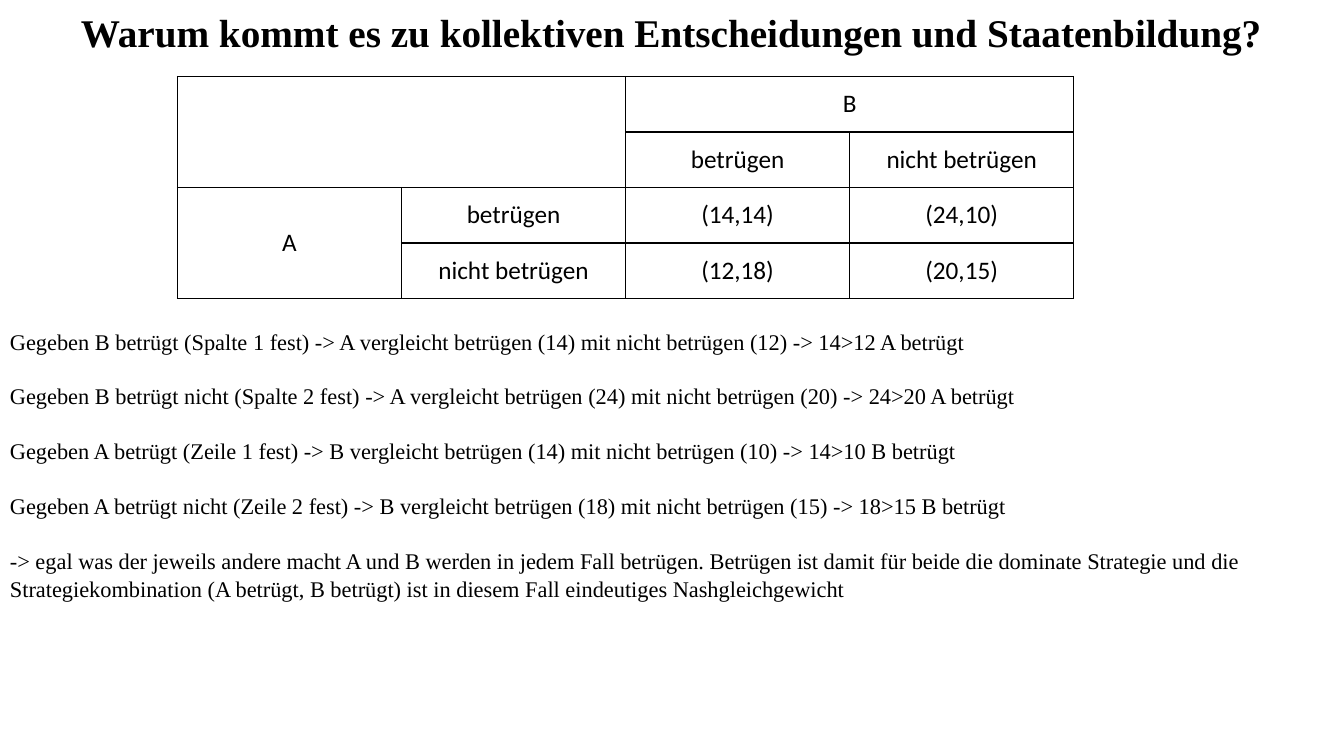
from lxml import etree
from pptx import Presentation
from pptx.dml.color import RGBColor
from pptx.enum.text import MSO_ANCHOR, PP_ALIGN
from pptx.oxml.ns import qn
from pptx.util import Inches, Pt

BLACK = RGBColor(0x00, 0x00, 0x00)
LEFT, CENTER = PP_ALIGN.LEFT, PP_ALIGN.CENTER
MIDDLE = MSO_ANCHOR.MIDDLE

TITLE = "Warum kommt es zu kollektiven Entscheidungen und Staatenbildung?"
PAYOFFS = [
    ["", "", "B", ""],
    ["", "", "betrügen", "nicht betrügen"],
    ["A", "betrügen", "(14,14)", "(24,10)"],
    ["", "nicht betrügen", "(12,18)", "(20,15)"],
]
MERGES = [((0, 0), (1, 1)), ((0, 2), (0, 3)), ((2, 0), (3, 0))]
REASONING = [
    "Gegeben B betrügt (Spalte 1 fest) -> A vergleicht betrügen (14) mit nicht betrügen (12) -> 14>12 A betrügt",
    "Gegeben B betrügt nicht (Spalte 2 fest) -> A vergleicht betrügen (24) mit nicht betrügen (20) -> 24>20 A betrügt",
    "Gegeben A betrügt (Zeile 1 fest) -> B vergleicht betrügen (14) mit nicht betrügen (10) -> 14>10 B betrügt",
    "Gegeben A betrügt nicht (Zeile 2 fest) -> B vergleicht betrügen (18) mit nicht betrügen (15) -> 18>15 B betrügt",
    "-> egal was der jeweils andere macht A und B werden in jedem Fall betrügen. "
    "Betrügen ist damit für beide die dominate Strategie und die "
    "Strategiekombination (A betrügt, B betrügt) ist in diesem Fall eindeutiges Nashgleichgewicht",
]


class SlideBuilder:
    text_font = "Times New Roman"
    table_font = "Calibri"
    color = BLACK
    border = Pt(1)

    def __init__(self, slide):
        self.slide = slide

    def style(self, p, font, size, align, bold=False):
        p.alignment = align
        p.font.name = font
        p.font.size = Pt(size)
        p.font.bold = bold
        p.font.color.rgb = self.color

    def text(self, box, lines, size, align=LEFT, bold=False, spacing=1.0, gap=0):
        tf = self.slide.shapes.add_textbox(*map(Inches, box)).text_frame
        tf.word_wrap = True
        for i, line in enumerate(lines):
            p = tf.add_paragraph() if i else tf.paragraphs[0]
            p.text = line
            p.line_spacing = spacing
            p.space_after = Pt(gap)
            self.style(p, self.text_font, size, align, bold)

    def outline(self, cell):
        tcPr = cell._tc.get_or_add_tcPr()
        for side in ("lnL", "lnR", "lnT", "lnB"):
            ln = etree.SubElement(tcPr, qn(f"a:{side}"), w=str(self.border))
            fill = etree.SubElement(ln, qn("a:solidFill"))
            etree.SubElement(fill, qn("a:srgbClr"), val=str(self.color))

    def table(self, box, rows, merges, size):
        frame = self.slide.shapes.add_table(len(rows), len(rows[0]), *map(Inches, box))
        table = frame.table
        table.first_row = table.horz_banding = False
        for r, row in enumerate(rows):
            for c, value in enumerate(row):
                cell = table.cell(r, c)
                cell.text = value
                cell.vertical_anchor = MIDDLE
                self.style(cell.text_frame.paragraphs[0], self.table_font, size, CENTER)
                self.outline(cell)
                cell.fill.background()
        for first, last in merges:
            table.cell(*first).merge(table.cell(*last))


def main():
    prs = Presentation()
    prs.slide_width, prs.slide_height = Inches(13.33), Inches(7.5)
    s = SlideBuilder(prs.slides.add_slide(prs.slide_layouts[6]))
    s.text((0, 0.03, 13.31, 0.59), [TITLE], 28, CENTER, bold=True)
    s.text((0, 3.19, 13.31, 4.3), REASONING, 16, spacing=1.05, gap=19)
    s.table((1.76, 0.76, 8.89, 2.2), PAYOFFS, MERGES, 18)
    prs.save("out.pptx")


if __name__ == "__main__":
    main()
